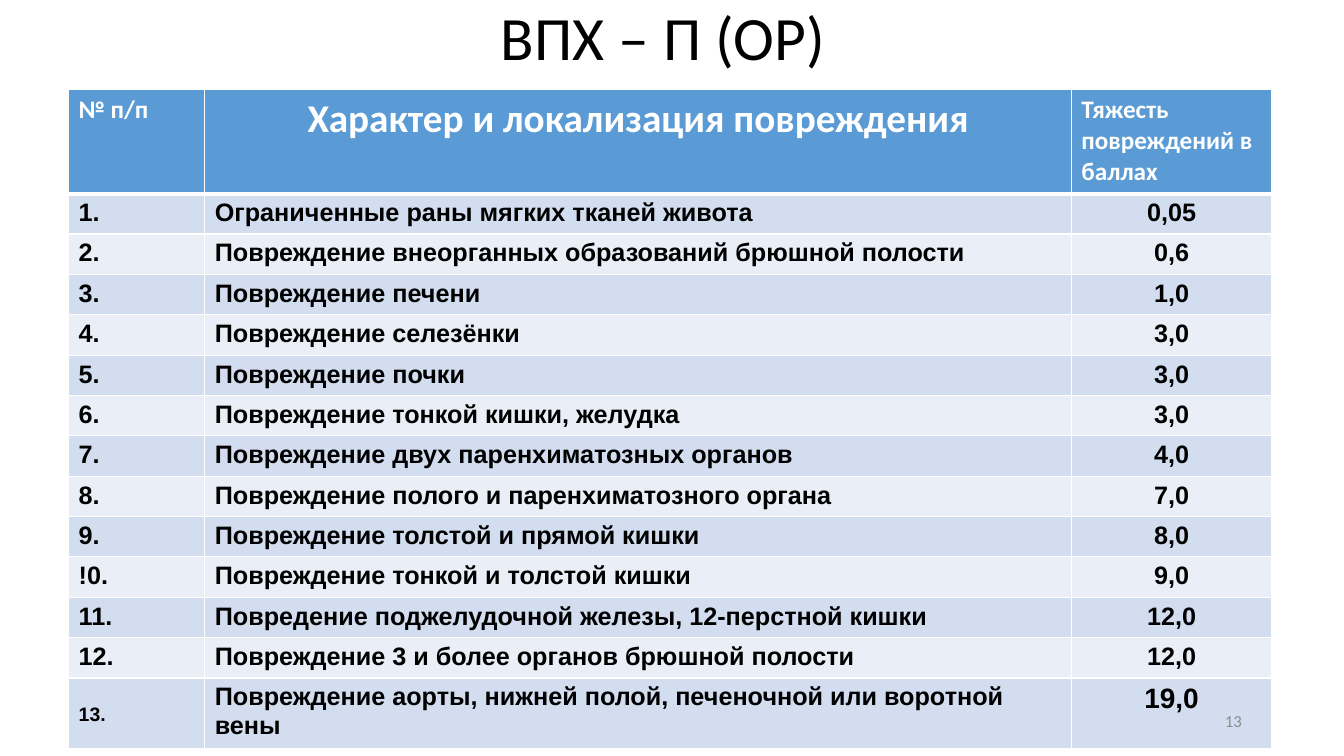
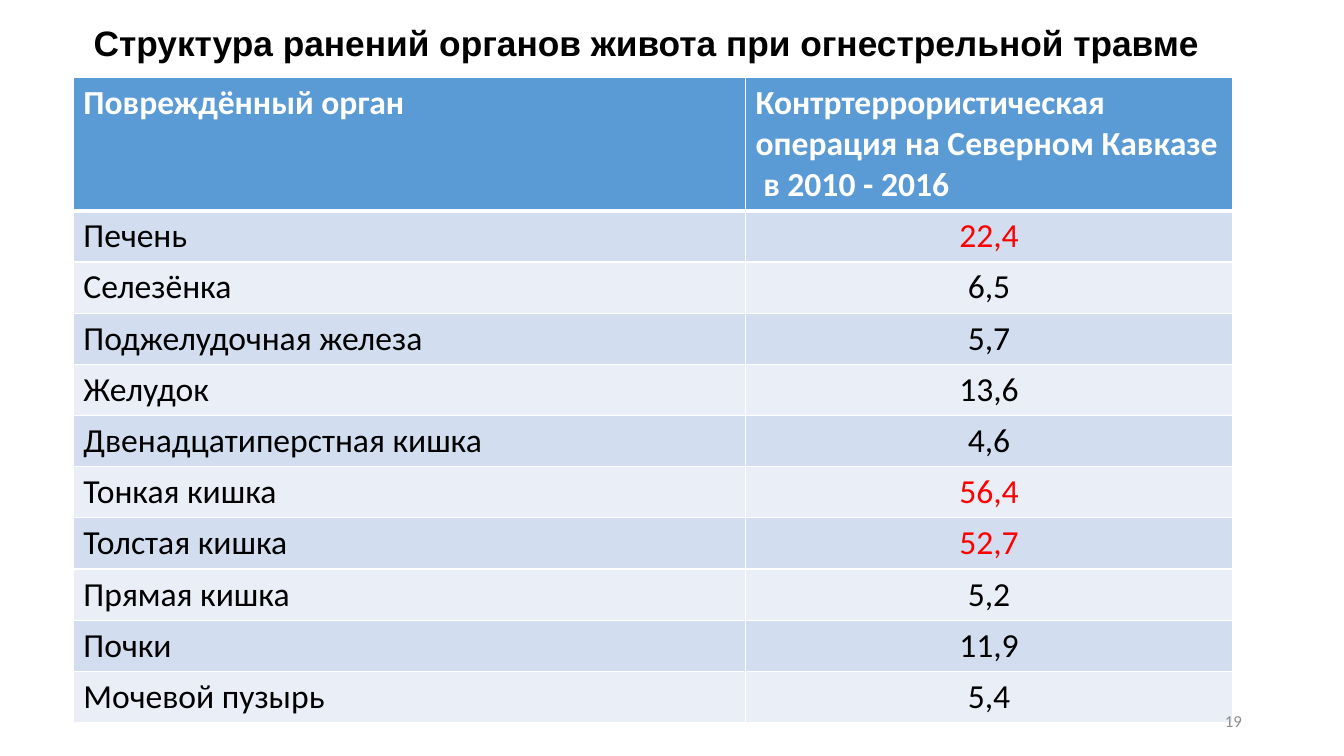
from dataclasses import dataclass

import pptx
import pptx.dml.color
import pptx.enum.text
import pptx.oxml
import pptx.oxml.ns
import pptx.util

Cm = pptx.util.Cm
LEFT = pptx.enum.text.PP_ALIGN.LEFT
CENTER = pptx.enum.text.PP_ALIGN.CENTER
RIGHT = pptx.enum.text.PP_ALIGN.RIGHT
MIDDLE = pptx.enum.text.MSO_ANCHOR.MIDDLE


@dataclass(frozen=True)
class Theme:
    ink: str = "000000"
    white: str = "FFFFFF"
    red: str = "FF0000"
    grey: str = "8C8C8C"
    header: str = "5B9BD5"
    bands: tuple = ("D2DEEF", "EAEFF7")
    sans: str = "Calibri"
    strong: str = "Arial"
    title: float = 44
    long_title: float = 25.2
    head: float = 28
    large: float = 24
    total: float = 20
    body: float = 18
    number: float = 12
    rule: float = 1
    head_rule: float = 3


T = Theme()

INJURIES = [
    ("1.", "Ограниченные раны мягких тканей живота", "0,05"),
    ("2.", "Повреждение внеорганных образований брюшной полости", "0,6"),
    ("3.", "Повреждение печени", "1,0"),
    ("4.", "Повреждение селезёнки", "3,0"),
    ("5.", "Повреждение почки", "3,0"),
    ("6.", "Повреждение тонкой кишки, желудка", "3,0"),
    ("7.", "Повреждение двух паренхиматозных органов", "4,0"),
    ("8.", "Повреждение полого и паренхиматозного органа", "7,0"),
    ("9.", "Повреждение толстой и прямой кишки", "8,0"),
    ("!0.", "Повреждение тонкой и толстой кишки", "9,0"),
    ("11.", "Повредение поджелудочной железы, 12-перстной кишки", "12,0"),
    ("12.", "Повреждение 3 и более органов брюшной полости", "12,0"),
    ("13.", "Повреждение аорты, нижней полой, печеночной или воротной вены", "19,0"),
]

ORGANS = [
    ("Печень", "22,4"),
    ("Селезёнка", "6,5"),
    ("Поджелудочная железа", "5,7"),
    ("Желудок", "13,6"),
    ("Двенадцатиперстная кишка", "4,6"),
    ("Тонкая кишка", "56,4"),
    ("Толстая кишка", "52,7"),
    ("Прямая кишка", "5,2"),
    ("Почки", "11,9"),
    ("Мочевой пузырь", "5,4"),
]
HIGHLIGHTS = {"22,4", "56,4", "52,7"}


def rgb(color):
    return pptx.dml.color.RGBColor.from_string(color)


def write(tf, text, size=T.body, font=T.sans, color=T.ink, bold=False,
          align=LEFT, spacing=None, baseline=None):
    p = tf.paragraphs[0]
    p.text = text
    p.alignment = align
    p.line_spacing = spacing
    for r in p.runs:
        r.font.size = pptx.util.Pt(size)
        r.font.name = font
        r.font.bold = bold
        r.font.color.rgb = rgb(color)
        if baseline is not None:
            r.font._element.set("baseline", str(baseline))


def add_text(s, text, left, top, width, height, **fmt):
    tf = s.shapes.add_textbox(Cm(left), Cm(top), Cm(width), Cm(height)).text_frame
    tf.word_wrap = True
    tf.vertical_anchor = MIDDLE
    write(tf, text, **fmt)


def add_title(s, text, height, **fmt):
    add_text(s, text, 2.11, 0, 29.21, height, spacing=0.9, **fmt)


def add_number(s, number):
    add_text(s, number, 23.93, 17.65, 7.62, 1.02,
             size=T.number, color=T.grey, align=RIGHT)


def set_borders(cell, **widths):
    tcPr = cell._tc.get_or_add_tcPr()
    ns = pptx.oxml.ns.nsdecls("a")
    for side in "LRTB":
        width = pptx.util.Pt(widths.get(side, T.rule))
        tcPr.append(pptx.oxml.parse_xml(
            f'<a:ln{side} {ns} w="{width}"><a:solidFill>'
            f'<a:srgbClr val="{T.white}"/></a:solidFill></a:ln{side}>'))


def add_table(s, left, top, widths, heights, rows, cell_format):
    table = s.shapes.add_table(len(rows), len(widths), Cm(left), Cm(top),
                               Cm(sum(widths)), Cm(sum(heights))).table
    for column, width in zip(table.columns, widths):
        column.width = Cm(width)
    for i, (row, height) in enumerate(zip(rows, heights)):
        table.rows[i].height = Cm(height)
        for j, text in enumerate(row):
            cell = table.cell(i, j)
            thick = {0: {"B": T.head_rule}, 1: {"T": T.head_rule}}
            set_borders(cell, **thick.get(i, {}))
            cell.fill.solid()
            cell.fill.fore_color.rgb = rgb(T.bands[(i - 1) % 2] if i else T.header)
            write(cell.text_frame, text, **cell_format(i, j, text))


def injury_format(i, j, text):
    if i == 0:
        fmt = dict(color=T.white, bold=True)
        return dict(fmt, size=T.head, align=CENTER) if j == 1 else fmt
    fmt = dict(font=T.strong, bold=True, align=CENTER if j == 2 else LEFT)
    if i == len(INJURIES):
        if j == 0:
            fmt.update(size=T.large, baseline=-25000)
        elif j == 2:
            fmt.update(size=T.total)
    return fmt


def organ_format(i, j, text):
    if i == 0:
        return dict(size=T.large, color=T.white, bold=True)
    return dict(size=T.large, align=CENTER if j else LEFT,
                color=T.red if text in HIGHLIGHTS else T.ink)


def severity_slide(s):
    add_title(s, "ВПХ – П (ОР)", 2.06, size=T.title, align=CENTER)
    header = ("№ п/п", "Характер и локализация повреждения",
              "Тяжесть повреждений в баллах")
    heights = [2.62] + [0.97] * (len(INJURIES) - 1) + [1.66]
    add_table(s, 1.73, 2.26, [3.43, 21.84, 5.05], heights,
              [header] + INJURIES, injury_format)
    add_number(s, "13")


def organ_slide(s):
    add_title(s, "Структура ранений органов живота при огнестрельной травме",
              2.29, size=T.long_title, font=T.strong, bold=True)
    header = ("Повреждённый орган",
              "Контртеррористическая операция на Северном Кавказе\v в 2010 - 2016")
    heights = [3.35] + [1.29] * len(ORGANS)
    add_table(s, 1.85, 1.96, [16.94, 12.27], heights,
              [header] + ORGANS, organ_format)
    add_number(s, "19")


def main():
    prs = pptx.Presentation()
    prs.slide_width, prs.slide_height = Cm(33.87), Cm(19.05)
    for build in (severity_slide, organ_slide):
        build(prs.slides.add_slide(prs.slide_layouts[6]))
    prs.save("out.pptx")


if __name__ == "__main__":
    main()
